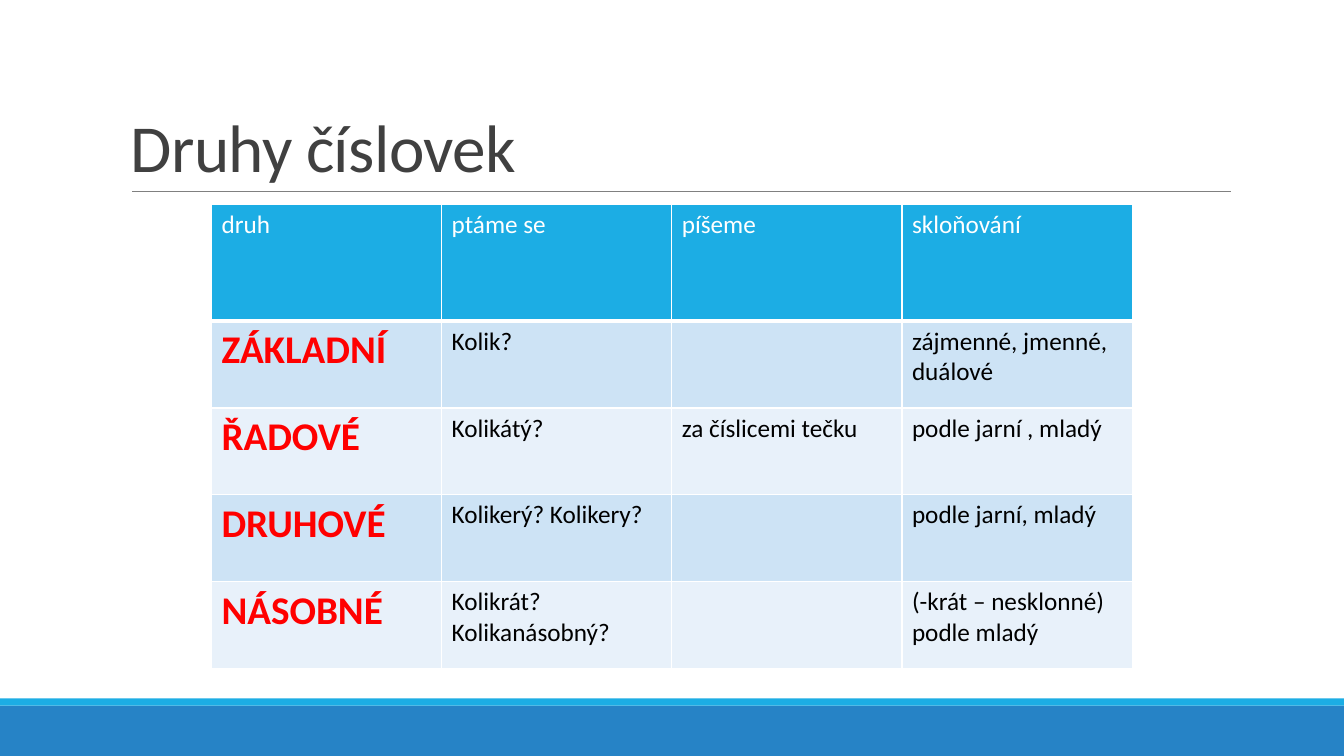
from dataclasses import dataclass

from lxml import etree
from pptx import Presentation
from pptx import util as u
from pptx.dml.color import RGBColor
from pptx.enum import shapes, text
from pptx.oxml import ns

WHITE = RGBColor(0xFF, 0xFF, 0xFF)
BLACK = RGBColor(0x00, 0x00, 0x00)
RED = RGBColor(0xFF, 0x00, 0x00)
GREY = RGBColor(0x80, 0x80, 0x80)
DARK = RGBColor(0x40, 0x40, 0x40)
BLUE = RGBColor(0x26, 0x83, 0xC6)
CYAN = RGBColor(0x1C, 0xAD, 0xE4)
BANDS = (RGBColor(0xCD, 0xE3, 0xF5), RGBColor(0xE8, 0xF1, 0xFA))
FONT = "Calibri"


@dataclass(frozen=True)
class Bar:
    top: float
    height: float
    color: RGBColor


@dataclass(frozen=True)
class Style:
    size: float
    color: RGBColor
    bold: bool = False


BARS = (Bar(17.78, 1.27, BLUE), Bar(17.6, 0.18, CYAN))
TITLE = Style(48, DARK)
HEAD = Style(18, WHITE)
KIND = Style(28, RED, True)
BODY = Style(18, BLACK)

# Each cell lists its paragraphs
ROWS = (
    (("druh",), ("ptáme se",), ("píšeme",), ("skloňování",)),
    (("ZÁKLADNÍ",), ("Kolik?",), (), ("zájmenné, jmenné, duálové",)),
    (("ŘADOVÉ",), ("Kolikátý?",), ("za číslicemi tečku",), ("podle jarní , mladý",)),
    (("DRUHOVÉ",), ("Kolikerý? Kolikery?",), (), ("podle jarní, mladý",)),
    (("NÁSOBNÉ",), ("Kolikrát? Kolikanásobný?",), (),
     ("(-krát – nesklonné)", "podle mladý")),
)


def add_bar(slide, bar: Bar, width: int) -> None:
    shape = slide.shapes.add_shape(
        shapes.MSO_SHAPE.RECTANGLE, 0, u.Cm(bar.top), width, u.Cm(bar.height))
    shape.shadow.inherit = False
    shape.fill.solid()
    shape.fill.fore_color.rgb = bar.color
    shape.line.fill.background()


def add_rule(slide) -> None:
    rule = slide.shapes.add_connector(
        shapes.MSO_CONNECTOR.STRAIGHT, u.Cm(3.33), u.Cm(4.83), u.Cm(31.01), u.Cm(4.83))
    rule.line.color.rgb = GREY
    rule.line.width = u.Pt(0.5)
    etree.SubElement(rule._element.spPr, ns.qn("a:effectLst"))


def add_run(para, words: str, style: Style):
    run = para.add_run()
    run.text = words
    run.font.name = FONT
    run.font.size = u.Pt(style.size)
    run.font.bold = style.bold
    run.font.color.rgb = style.color
    return run


def add_title(slide) -> None:
    box = slide.shapes.add_textbox(u.Cm(3.05), u.Cm(0.79), u.Cm(27.94), u.Cm(4.04))
    frame = box.text_frame
    frame.word_wrap = True
    frame.vertical_anchor = text.MSO_ANCHOR.BOTTOM
    para = frame.paragraphs[0]
    para.line_spacing = 0.85
    run = add_run(para, "Druhy číslovek", TITLE)
    run.font._element.set("spc", "-50")


def add_edge(cell, side: str, width: float) -> None:
    edge = etree.SubElement(
        cell._tc.get_or_add_tcPr(), ns.qn(f"a:ln{side}"), w=str(u.Pt(width)))
    fill = etree.SubElement(edge, ns.qn("a:solidFill"))
    etree.SubElement(fill, ns.qn("a:srgbClr"), val=str(WHITE))


def fill_cell(cell, lines: tuple[str, ...], style: Style, color: RGBColor,
              base: float) -> None:
    for side in "LRT":
        add_edge(cell, side, 1)
    add_edge(cell, "B", base)
    cell.fill.solid()
    cell.fill.fore_color.rgb = color
    frame = cell.text_frame
    for i, line in enumerate(lines):
        para = frame.add_paragraph() if i else frame.paragraphs[0]
        add_run(para, line, style)


def add_grid(slide) -> None:
    grid = slide.shapes.add_table(
        len(ROWS), len(ROWS[0]), u.Cm(5.33), u.Cm(5.14), u.Cm(23.2), u.Cm(11.71)).table
    grid.first_row = False
    grid.horz_banding = False
    for col in grid.columns:
        col.width = u.Cm(5.8)
    for r, row in enumerate(ROWS):
        top = r == 0
        grid.rows[r].height = u.Cm(2.95 if top else 2.19)
        color = CYAN if top else BANDS[(r - 1) % 2]
        for c, lines in enumerate(row):
            style = HEAD if top else BODY if c else KIND
            fill_cell(grid.cell(r, c), lines, style, color, 3 if top else 1)


def main() -> None:
    deck = Presentation()
    deck.slide_width = u.Cm(33.87)
    deck.slide_height = u.Cm(19.05)
    slide = deck.slides.add_slide(deck.slide_layouts[6])

    # Footer bars and title rule
    for bar in BARS:
        add_bar(slide, bar, deck.slide_width)
    add_rule(slide)

    # Title and table of numeral kinds
    add_title(slide)
    add_grid(slide)
    deck.save("out.pptx")


if __name__ == "__main__":
    main()
